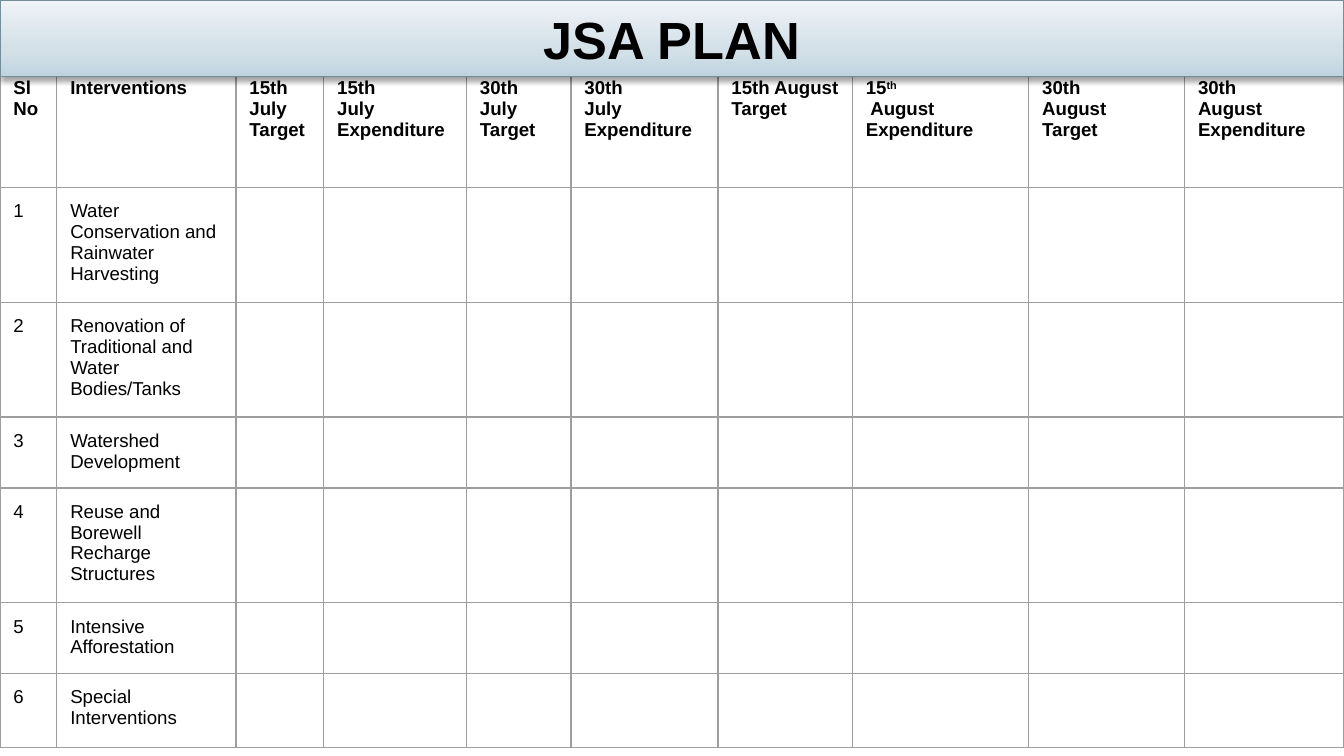
from copy import deepcopy

from pptx import Presentation
from pptx.dml.color import RGBColor
from pptx.enum import text
from pptx.oxml import parse_xml
from pptx.oxml.ns import nsdecls, qn
from pptx.util import Pt

BLACK = RGBColor(0x00, 0x00, 0x00)
BORDER = RGBColor(0x9E, 0x9E, 0x9E)
BAR_LINE = RGBColor(0x74, 0x8D, 0x99)
BAR_STOPS = [
    (0, RGBColor(0xC0, 0xD4, 0xE0)),
    (0.35, RGBColor(0xD3, 0xE0, 0xE8)),
    (1, RGBColor(0xEE, 0xF3, 0xF7)),
]

WIDTHS = [30.5, 96, 47, 76.5, 56, 78.75, 72, 94.5, 83.5, 85.25]
HEIGHTS = [66, 61.5, 61.5, 38, 61.5, 38, 39.6]
HEADERS = [
    "Sl No",
    "Interventions",
    "15th July\nTarget",
    "15th\nJuly\nExpenditure",
    "30th July\nTarget",
    "30th\nJuly\nExpenditure",
    "15th August\nTarget",
    "15\n August\nExpenditure",
    "30th\nAugust\nTarget",
    "30th\nAugust\nExpenditure",
]
SUPERSCRIPT_COLUMN = 7
INTERVENTIONS = [
    "Water Conservation and Rainwater Harvesting",
    "Renovation of Traditional and Water Bodies/Tanks",
    "Watershed Development",
    "Reuse and Borewell Recharge Structures",
    "Intensive Afforestation",
    "Special Interventions",
]


def set_font(paragraph, size, bold):
    font = paragraph.font
    font.name = "Arial"
    font.size = Pt(size)
    font.bold = bold
    font.color.rgb = BLACK


def set_borders(cell):
    properties = cell._tc.get_or_add_tcPr()
    for position, side in enumerate("LRTB"):
        properties.insert(position, parse_xml(
            f'<a:ln{side} {nsdecls("a")} w="{Pt(0.75)}"><a:solidFill>'
            f'<a:srgbClr val="{BORDER}"/></a:solidFill></a:ln{side}>'))


deck = Presentation()
deck.slide_width = Pt(720)
deck.slide_height = Pt(405)
page = deck.slides.add_slide(deck.slide_layouts[5])

# Plan table
rows = [HEADERS]
for number, intervention in enumerate(INTERVENTIONS, start=1):
    rows.append([str(number), intervention] + [""] * (len(WIDTHS) - 2))

frame = page.shapes.add_table(len(rows), len(WIDTHS), Pt(0), Pt(34.5),
                              Pt(sum(WIDTHS)), Pt(sum(HEIGHTS)))
table = frame.table
table.horz_banding = False
for column, width in zip(table.columns, WIDTHS):
    column.width = Pt(width)

for row_index, (row, height) in enumerate(zip(rows, HEIGHTS)):
    table.rows[row_index].height = Pt(height)
    for column_index, words in enumerate(row):
        cell = table.cell(row_index, column_index)
        cell.margin_left = cell.margin_right = Pt(7.2)
        cell.margin_top = cell.margin_bottom = Pt(7.2)
        cell.fill.background()
        set_borders(cell)
        cell.text = words
        for paragraph in cell.text_frame.paragraphs:
            set_font(paragraph, 10, row_index == 0)

ordinal = table.cell(0, SUPERSCRIPT_COLUMN).text_frame.paragraphs[0].add_run()
ordinal.text = "th"
ordinal.font._element.set("baseline", "30000")

# Title bar, in front of the table
title = page.shapes.title
title.left, title.top, title.width, title.height = Pt(0), Pt(0), Pt(720), Pt(41)
page.shapes._spTree.append(title._element)

title.fill.gradient()
title.fill.gradient_angle = 90
stop_list = title._element.spPr.find(".//" + qn("a:gsLst"))
stop_list.append(deepcopy(stop_list[-1]))
for stop, (position, color) in zip(title.fill.gradient_stops, BAR_STOPS):
    stop.position = position
    stop.color.rgb = color
title.line.color.rgb = BAR_LINE
title.line.width = Pt(0.75)
title._element.spPr.append(parse_xml(
    f'<a:effectLst {nsdecls("a")}><a:outerShdw blurRad="{Pt(3.1)}" '
    f'dist="{Pt(1.6)}" dir="5400000" rotWithShape="0"><a:srgbClr val="{BLACK}">'
    '<a:alpha val="38000"/></a:srgbClr></a:outerShdw></a:effectLst>'))

title.text_frame.text = "JSA PLAN"
title.text_frame.vertical_anchor = text.MSO_ANCHOR.MIDDLE
heading = title.text_frame.paragraphs[0]
heading.alignment = text.PP_ALIGN.CENTER
set_font(heading, 28, True)

deck.save("out.pptx")
